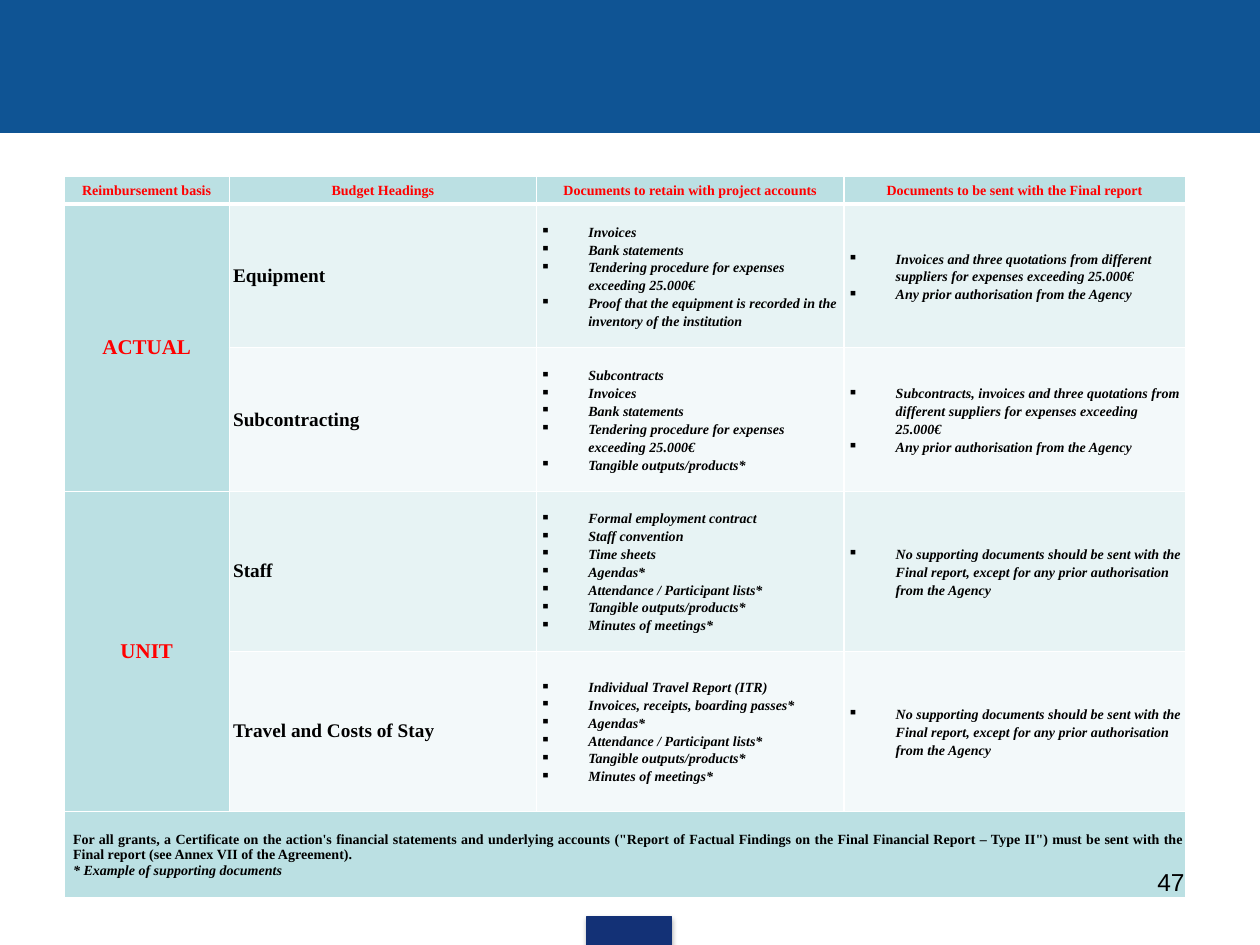
from lxml import etree
from pptx import Presentation
from pptx import util as u
from pptx.dml.color import RGBColor
from pptx.enum import shapes, text
from pptx.oxml import ns

WIDTH, HEIGHT = u.Inches(10), u.Inches(7.5)
BANNER = RGBColor(0x0F, 0x54, 0x94)
FOOTER = RGBColor(0x13, 0x31, 0x76)
TEAL = RGBColor(0xBB, 0xE0, 0xE3)
BANDS = RGBColor(0xE7, 0xF3, 0xF4), RGBColor(0xF3, 0xF9, 0xFA)
RED = RGBColor(0xFF, 0, 0)
BLACK = RGBColor(0, 0, 0)
SERIF = "Times New Roman"
CENTER, LEFT = text.PP_ALIGN.CENTER, text.PP_ALIGN.LEFT

COLUMNS = [1.31, 2.44, 2.44, 2.71]
ROWS = [0.22, 1.14, 1.14, 1.27, 1.27, 0.69]
HEADERS = ["Reimbursement basis", "Budget Headings",
           "Documents to retain with project accounts",
           "Documents to be sent with the Final report"]
BASES = ["ACTUAL", "UNIT"]
TENDERING = "Tendering procedure for expenses exceeding 25.000€"
AUTHORISATION = "Any prior authorisation from the Agency"
NOTHING_TO_SEND = ("No supporting documents should be sent with the Final report, "
                   "except for any prior authorisation from the Agency")
LISTS, OUTPUTS, MINUTES = ("Attendance / Participant lists*",
                           "Tangible outputs/products*", "Minutes of meetings*")
HEADINGS = [
    ("Equipment",
     ["Invoices", "Bank statements", TENDERING,
      "Proof that the equipment is recorded in the inventory of the institution"],
     ["Invoices and three quotations from different suppliers for expenses "
      "exceeding 25.000€", AUTHORISATION]),
    ("Subcontracting",
     ["Subcontracts", "Invoices", "Bank statements", TENDERING, OUTPUTS],
     ["Subcontracts, invoices and three quotations from different suppliers "
      "for expenses exceeding 25.000€", AUTHORISATION]),
    ("Staff",
     ["Formal employment contract", "Staff convention", "Time sheets",
      "Agendas*", LISTS, OUTPUTS, MINUTES],
     [NOTHING_TO_SEND]),
    ("Travel and Costs of Stay",
     ["Individual Travel Report (ITR)", "Invoices, receipts, boarding passes*",
      "Agendas*", LISTS, OUTPUTS, MINUTES],
     [NOTHING_TO_SEND]),
]
NOTES = [
    "For all grants, a Certificate on the action's financial statements and "
    'underlying accounts ("Report of Factual Findings on the Final Financial '
    'Report – Type II") must be sent with the Final report (see Annex VII of '
    "the Agreement).",
    "* Example of supporting documents",
]


def add_bar(slide, left, top, width, height, color):
    """Add a filled rectangle placed by shares of the slide's size."""
    bar = slide.shapes.add_shape(
        shapes.MSO_SHAPE.RECTANGLE, int(left * WIDTH), int(top * HEIGHT),
        int(width * WIDTH), int(height * HEIGHT))
    bar.shadow.inherit = False
    bar.fill.solid()
    bar.fill.fore_color.rgb = color
    bar.line.color.rgb = color
    bar.line.width = u.Pt(0.75)
    return bar


def add_shadow(shape):
    effects = shape.element.spPr.find(ns.qn("a:effectLst"))
    shadow = etree.SubElement(
        effects, ns.qn("a:outerShdw"), blurRad=str(u.Pt(3.1)),
        dist=str(u.Pt(1.8)), dir="5400000", rotWithShape="0")
    color = etree.SubElement(shadow, ns.qn("a:srgbClr"), val="000000")
    etree.SubElement(color, ns.qn("a:alpha"), val="35000")


def set_borders(cell, top=1, bottom=1):
    """Give the cell white borders, with widths in points."""
    properties = cell._tc.get_or_add_tcPr()
    widths = {"lnL": 1, "lnR": 1, "lnT": top, "lnB": bottom}
    for position, (side, width) in enumerate(widths.items()):
        line = etree.Element(ns.qn(f"a:{side}"), w=str(u.Pt(width)))
        fill = etree.SubElement(line, ns.qn("a:solidFill"))
        etree.SubElement(fill, ns.qn("a:srgbClr"), val="FFFFFF")
        properties.insert(position, line)


def set_indent(paragraph, left, bullet=False):
    properties = paragraph._p.get_or_add_pPr()
    properties.set("marL", str(u.Inches(left)))
    if bullet:
        properties.set("indent", str(-u.Inches(left)))
        etree.SubElement(properties, ns.qn("a:buChar"), char="▪")


def format_font(paragraph, size, color, name=SERIF, bold=True, italic=False):
    font = paragraph.font
    font.name, font.size, font.bold, font.italic = name, u.Pt(size), bold, italic
    font.color.rgb = color


def style_cell(cell, fill, side_margin=0.03):
    cell.fill.solid()
    cell.fill.fore_color.rgb = fill
    cell.vertical_anchor = text.MSO_ANCHOR.MIDDLE
    cell.margin_left = cell.margin_right = u.Inches(side_margin)
    cell.margin_top = cell.margin_bottom = 0


def fill_label(cell, label, fill, size, color, align):
    style_cell(cell, fill)
    cell.text = label
    paragraph = cell.text_frame.paragraphs[0]
    paragraph.alignment = align
    format_font(paragraph, size, color)


def fill_list(cell, items, fill):
    style_cell(cell, fill)
    cell.text = "\n".join(items)
    for paragraph in cell.text_frame.paragraphs:
        set_indent(paragraph, 0.38, bullet=True)
        paragraph.line_spacing = 1.15
        format_font(paragraph, 8, BLACK, italic=True)


def fill_notes(cell):
    style_cell(cell, TEAL, side_margin=0)
    cell.text = "\n".join(NOTES)
    for paragraph, italic in zip(cell.text_frame.paragraphs, (False, True)):
        set_indent(paragraph, 0.07)
        paragraph.alignment = text.PP_ALIGN.JUSTIFY
        format_font(paragraph, 8, BLACK, italic=italic)


def add_documents_table(slide):
    table = slide.shapes.add_table(
        len(ROWS), len(COLUMNS), u.Inches(0.51), u.Inches(1.4),
        u.Inches(sum(COLUMNS)), u.Inches(sum(ROWS))).table
    table.first_row = table.horz_banding = False
    for column, width in zip(table.columns, COLUMNS):
        column.width = u.Inches(width)
    for index, (row, height) in enumerate(zip(table.rows, ROWS)):
        row.height = u.Inches(height)
        for cell in row.cells:
            set_borders(cell, top=3 if index == 1 else 1,
                        bottom=3 if index == 0 else 1)

    for column, header in enumerate(HEADERS):
        fill_label(table.cell(0, column), header, TEAL, 8, RED, CENTER)
    for index, basis in enumerate(BASES):
        first = 1 + 2 * index
        table.cell(first, 0).merge(table.cell(first + 1, 0))
        fill_label(table.cell(first, 0), basis, TEAL, 12, RED, CENTER)
    for row, (heading, retained, sent) in enumerate(HEADINGS, start=1):
        band = BANDS[(row - 1) % 2]
        fill_label(table.cell(row, 1), heading, band, 11, BLACK, LEFT)
        fill_list(table.cell(row, 2), retained, band)
        fill_list(table.cell(row, 3), sent, band)
    last = len(ROWS) - 1
    table.cell(last, 0).merge(table.cell(last, len(COLUMNS) - 1))
    fill_notes(table.cell(last, 0))


def add_page_number(slide, number):
    box = slide.shapes.add_textbox(
        u.Inches(7.17), u.Inches(6.83), u.Inches(2.33), u.Inches(0.52))
    box.text_frame.word_wrap = True
    paragraph = box.text_frame.paragraphs[0]
    paragraph.text = number
    paragraph.alignment = text.PP_ALIGN.RIGHT
    format_font(paragraph, 14, BLACK, name="Arial", bold=False)


def main():
    presentation = Presentation()
    presentation.slide_width, presentation.slide_height = WIDTH, HEIGHT
    blank_layout = presentation.slide_layouts[6]
    slide = presentation.slides.add_slide(blank_layout)
    add_bar(slide, 0, 0, 1, 0.14, BANNER)
    add_shadow(add_bar(slide, 0.466, 0.97, 0.067, 0.03, FOOTER))
    add_documents_table(slide)
    add_page_number(slide, "47")
    presentation.save("out.pptx")


if __name__ == "__main__":
    main()
